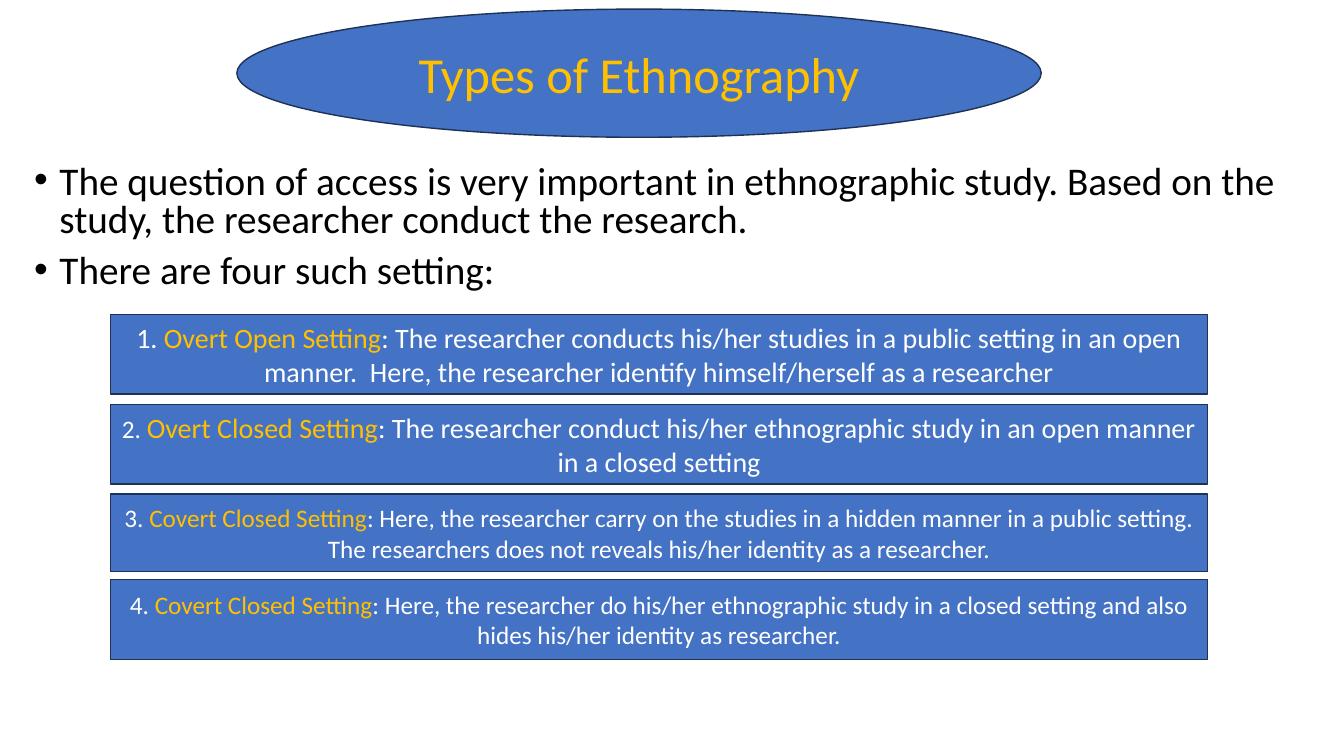
from pptx import Presentation
from pptx.dml.color import RGBColor
from pptx.enum.shapes import MSO_SHAPE
from pptx.enum.text import MSO_ANCHOR, PP_ALIGN
from pptx.oxml.ns import qn
from pptx.util import Cm, Pt
from lxml.etree import SubElement

COLORS = {"fill": "4472C4", "edge": "1E3256", "gold": "FFC000",
          "white": "FFFFFF", "black": "000000"}
POINTS = [
    "The question of access is very important in ethnographic study. "
    "Based on the study, the researcher conduct the research.",
    "There are four such setting:",
]
# top, height, number size, text size, name, detail
TYPES = [
    (7.92, 2.01, 20, 20, "Overt Open Setting",
     "The researcher conducts his/her studies in a public setting in an open "
     "manner.  Here, the researcher identify himself/herself as a researcher"),
    (10.19, 2.01, 18, 20, "Overt Closed Setting",
     "The researcher conduct his/her ethnographic study in an open manner "
     "in a closed setting"),
    (12.45, 1.96, 18, 18, "Covert Closed Setting",
     "Here, the researcher carry on the studies in a hidden manner in a public "
     "setting. The researchers does not reveals his/her identity as a researcher."),
    (14.61, 2.01, 18, 18, "Covert Closed Setting",
     "Here, the researcher do his/her ethnographic study in a closed setting "
     "and also hides his/her identity as researcher."),
]


def color(name):
    """Return the named palette colour."""
    return RGBColor.from_string(COLORS[name])


def panel(slide, kind, box):
    """Draw a blue shape in the box and return its centred paragraph."""
    shape = slide.shapes.add_shape(kind, *map(Cm, box))
    shape.shadow.inherit = False
    shape.fill.solid()
    shape.fill.fore_color.rgb = color("fill")
    shape.line.color.rgb = color("edge")
    shape.line.width = Pt(1)
    frame = shape.text_frame
    frame.word_wrap = True
    frame.vertical_anchor = MSO_ANCHOR.MIDDLE
    para = frame.paragraphs[0]
    para.alignment = PP_ALIGN.CENTER
    para.font.name = "Calibri"
    return para


def title(slide, box):
    """Draw the title ellipse in the box."""
    para = panel(slide, MSO_SHAPE.OVAL, box)
    para.text = "Types of Ethnography"
    para.font.size = Pt(36)
    para.font.color.rgb = color("gold")


def intro(slide, box):
    """Write the bulleted opening in the box."""
    frame = slide.shapes.add_textbox(*map(Cm, box)).text_frame
    frame.word_wrap = True
    for num, text in enumerate(POINTS):
        para = frame.add_paragraph() if num else frame.paragraphs[0]
        para.text = text
        para.line_spacing = 0.8
        para.space_before = Pt(10)
        para.font.name = "Calibri"
        para.font.size = Pt(28)
        para.font.color.rgb = color("black")
        props = para._p.get_or_add_pPr()
        props.set("marL", str(Cm(0.64)))
        props.set("indent", str(-Cm(0.64)))
        font = props.find(qn("a:defRPr"))
        mark = SubElement(props, qn("a:buFont"), typeface="Arial")
        sign = SubElement(props, qn("a:buChar"), char="•")
        font.addprevious(mark)
        font.addprevious(sign)


def setting(slide, box, num, first, size, name, detail):
    """Draw one numbered setting in the box."""
    para = panel(slide, MSO_SHAPE.RECTANGLE, box)
    parts = [(f"{num}. ", first, "white"), (name, size, "gold"),
             (f": {detail}", size, "white")]
    for text, points, shade in parts:
        run = para.add_run()
        run.text = text
        run.font.size = Pt(points)
        run.font.color.rgb = color(shade)


def main():
    """Build and save the slide."""
    deck = Presentation()
    deck.slide_width, deck.slide_height = Cm(33.87), Cm(19.05)
    slide = deck.slides.add_slide(deck.slide_layouts[6])
    title(slide, (5.97, 0.23, 20.27, 3.23))
    intro(slide, (0.61, 4.04, 32.79, 14.78))
    for num, (top, high, *rest) in enumerate(TYPES, 1):
        setting(slide, (2.79, top, 27.64, high), num, *rest)
    deck.save("out.pptx")


if __name__ == "__main__":
    main()
